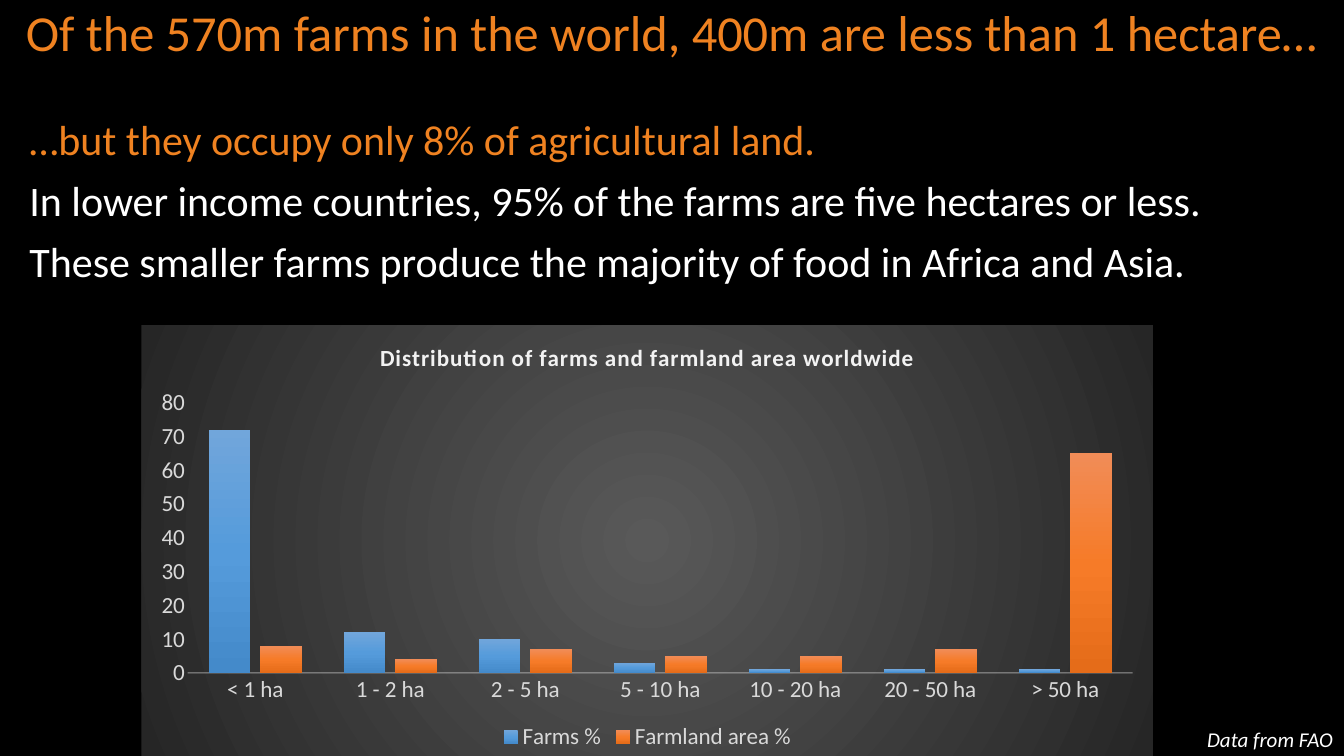
"""Builds a slide on how the world's farms and farmland are distributed by size."""
from lxml import etree
from pptx import Presentation
from pptx import util as u
from pptx.chart.data import CategoryChartData
from pptx.dml.color import RGBColor
from pptx.enum import chart as ch
from pptx.enum import text
from pptx.oxml import parse_xml
from pptx.oxml.ns import nsdecls, qn

BLACK = RGBColor(0x00, 0x00, 0x00)
WHITE = RGBColor(0xFF, 0xFF, 0xFF)
ORANGE = RGBColor(0xEF, 0x82, 0x21)
LABEL_GREY = RGBColor(0xD9, 0xD9, 0xD9)
PALE_GREY = RGBColor(0xF2, 0xF2, 0xF2)
PANEL_STOPS = (RGBColor(0x59, 0x59, 0x59), RGBColor(0x26, 0x26, 0x26))
FARM_STOPS = (RGBColor(0x71, 0xA6, 0xDB), RGBColor(0x55, 0x9B, 0xDB), RGBColor(0x44, 0x8A, 0xCA))
LAND_STOPS = (RGBColor(0xF1, 0x8C, 0x57), RGBColor(0xF6, 0x7B, 0x28), RGBColor(0xE5, 0x6C, 0x19))
DOWNWARD = '<a:lin ang="5400000" scaled="0"/>'
FROM_CENTRE = ('<a:path path="circle"><a:fillToRect l="50000" t="50000" '
               'r="50000" b="50000"/></a:path>')


def gradient(colours, direction):
    step = 100000 // (len(colours) - 1)
    stops = "".join(f'<a:gs pos="{i * step}"><a:srgbClr val="{colour}"/></a:gs>'
                    for i, colour in enumerate(colours))
    return parse_xml(f'<a:gradFill {nsdecls("a")} rotWithShape="1">'
                     f'<a:gsLst>{stops}</a:gsLst>{direction}</a:gradFill>')


class FarmSlide:
    font_name = "Calibri"
    chart_size = 22

    def __init__(self, deck):
        self.slide = deck.slides.add_slide(deck.slide_layouts[6])
        self.slide.background.fill.solid()
        self.slide.background.fill.fore_color.rgb = BLACK

    def style(self, font, size, colour, **traits):
        font.name, font.size, font.color.rgb = self.font_name, u.Pt(size), colour
        for trait, value in traits.items():
            setattr(font, trait, value)

    def add_text(self, place, lines, size, align=None, wrap=True, after=None,
                 spacing=None, anchor=text.MSO_ANCHOR.TOP, **traits):
        frame = self.slide.shapes.add_textbox(*map(u.Cm, place)).text_frame
        frame.word_wrap = wrap
        frame.vertical_anchor = anchor
        for i, (words, colour) in enumerate(lines):
            paragraph = frame.add_paragraph() if i else frame.paragraphs[0]
            paragraph.text = words
            paragraph.alignment = align
            paragraph.space_after = after
            paragraph.line_spacing = spacing
            self.style(paragraph.font, size, colour, **traits)

    def add_columns(self, place, title, categories, series):
        figures = CategoryChartData()
        figures.categories = categories
        for name, values, _ in series:
            figures.add_series(name, values)
        chart = self.slide.shapes.add_chart(
            ch.XL_CHART_TYPE.COLUMN_CLUSTERED, *map(u.Cm, place), figures).chart
        self.style(chart.font, self.chart_size, LABEL_GREY)
        panel = parse_xml(f'<c:spPr {nsdecls("c", "a")}><a:ln><a:noFill/></a:ln></c:spPr>')
        panel.insert(0, gradient(PANEL_STOPS, FROM_CENTRE))
        chart._chartSpace.find(qn("c:txPr")).addprevious(panel)

        heading = chart.chart_title.text_frame.paragraphs[0]
        heading.text = title
        self.style(heading.font, self.chart_size, PALE_GREY, bold=True)
        heading.runs[0].font._element.set("spc", "100")
        chart.chart_title.include_in_layout = False

        chart.has_legend = True
        chart.legend.position = ch.XL_LEGEND_POSITION.BOTTOM
        chart.legend.include_in_layout = False
        self.style(chart.legend.font, self.chart_size, LABEL_GREY)

        plot = chart.plots[0]
        plot.gap_width, plot.overlap, plot.vary_by_categories = 100, -24, False
        for columns, (_, _, stops) in zip(plot.series, series):
            columns._element.get_or_add_spPr().insert(0, gradient(stops, DOWNWARD))

        for axis in (chart.category_axis, chart.value_axis):
            axis.major_tick_mark = axis.minor_tick_mark = ch.XL_TICK_MARK.NONE
            axis.has_major_gridlines = False
            self.style(axis.tick_labels.font, self.chart_size, LABEL_GREY)
        scale = chart.value_axis
        scale.minimum_scale, scale.maximum_scale, scale.major_unit = 0, 80, 10
        scale.format.line.fill.background()
        baseline = chart.category_axis.format.line
        baseline.width = u.Pt(1)
        baseline.color.rgb = PALE_GREY
        tint = chart.category_axis._element.find(".//" + qn("a:ln")).find(".//" + qn("a:srgbClr"))
        etree.SubElement(tint, qn("a:alpha")).set("val", "54000")


def main():
    deck = Presentation()
    deck.slide_width, deck.slide_height = u.Cm(45.16), u.Cm(25.4)
    farms = FarmSlide(deck)
    farms.add_columns(
        (4.75, 10.92, 33.99, 14.48),
        "Distribution of farms and farmland area worldwide",
        ("< 1 ha", "1 - 2 ha", "2 - 5 ha", "5 - 10 ha", "10 - 20 ha", "20 - 50 ha", "> 50 ha"),
        (("Farms %", (72, 12, 10, 3, 1, 1, 1), FARM_STOPS),
         ("Farmland area %", (8, 4, 7, 5, 5, 7, 65), LAND_STOPS)))
    farms.add_text(
        (0, 0, 45.16, 2.34),
        [("Of the 570m farms in the world, 400m are less than 1 hectare…", ORANGE)],
        48, align=text.PP_ALIGN.CENTER, spacing=0.9, anchor=text.MSO_ANCHOR.MIDDLE)
    farms.add_text(
        (0.74, 3.68, 43.71, 7.75),
        [("…but they occupy only 8% of agricultural land.", ORANGE),
         ("In lower income countries, 95% of the farms are five hectares or less.", WHITE),
         ("These smaller farms produce the majority of food in Africa and Asia.", WHITE)],
        40, align=text.PP_ALIGN.JUSTIFY, after=u.Pt(10))
    farms.add_text((40.31, 24.28, 4.85, 1.12), [("Data from FAO", WHITE)],
                   20, wrap=False, italic=True)
    deck.save("out.pptx")


if __name__ == "__main__":
    main()
